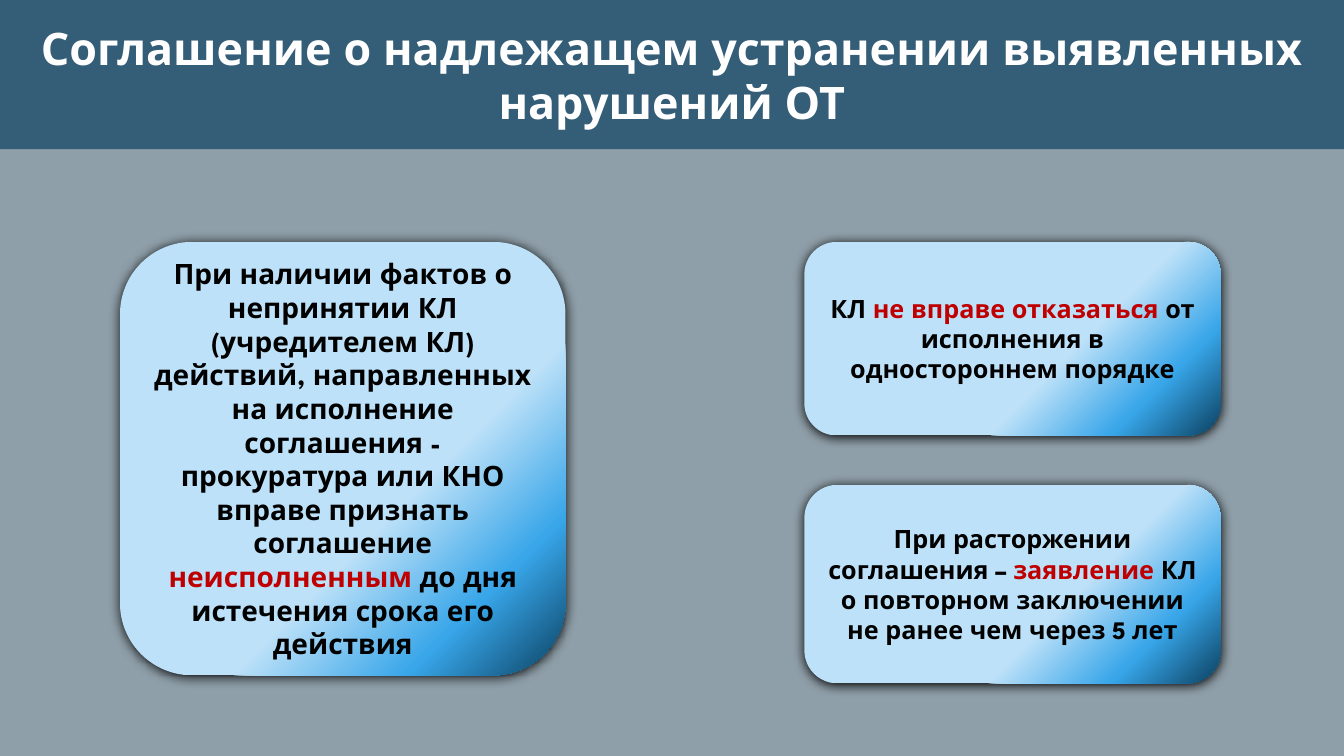
from copy import deepcopy

from lxml import etree
from pptx import Presentation
from pptx.dml.color import RGBColor
from pptx.enum.shapes import MSO_SHAPE
from pptx.enum.text import MSO_ANCHOR, MSO_AUTO_SIZE, PP_ALIGN
from pptx.oxml.ns import qn
from pptx.util import Pt

ROUNDED = MSO_SHAPE.ROUNDED_RECTANGLE
MIDDLE = MSO_ANCHOR.MIDDLE
CENTER = PP_ALIGN.CENTER
NO_AUTOFIT = MSO_AUTO_SIZE.NONE

FONT = "League Spartan"
BACKGROUND, BANNER = "8F9FA9", "345D77"
WHITE, BLACK, RED = "FFFFFF", "000000", "C00000"
GRADIENT = [(0.62, "BDE1F8"), (0.82, "38A6E9"), (1, "0B4060")]

SLIDE_SIZE = (960, 540)
BANNER_HEIGHT = 106.56
TITLE = "Соглашение о надлежащем устранении выявленных нарушений ОТ"

# (left, top, width, height), font size, [(text, colour)]
CARDS = [
    ((85.68, 172.8, 318.24, 309.6), 20, [
        ("При наличии фактов о непринятии КЛ (учредителем КЛ) действий, "
         "направленных на исполнение соглашения - прокуратура или КНО "
         "вправе признать соглашение ", BLACK),
        ("неисполненным", RED),
        (" до дня истечения срока его действия", BLACK)]),
    ((574.56, 172.8, 297.36, 138.24), 18, [
        ("КЛ ", BLACK),
        ("не вправе отказаться", RED),
        (" от исполнения в одностороннем порядке", BLACK)]),
    ((574.56, 346.32, 297.36, 141.84), 18, [
        ("При расторжении соглашения – ", BLACK),
        ("заявление", RED),
        (" КЛ о повторном заключении не ранее чем через 5 лет", BLACK)]),
]


def color(value):
    return RGBColor.from_string(value)


def format_text(shape, size):
    """Centre the shape's text both ways and return its paragraph."""
    frame = shape.text_frame
    frame.word_wrap = True
    frame.auto_size = NO_AUTOFIT
    frame.vertical_anchor = MIDDLE
    para = frame.paragraphs[0]
    para.alignment = CENTER
    para.font.name = FONT
    para.font.size = Pt(size)
    para.font.bold = True
    return para


def fill_gradient(shape):
    fill = shape.fill
    fill.gradient()
    fill.gradient_angle = 315
    stop_list = next(shape._element.spPr.iter(qn("a:gsLst")))
    stop_list.append(deepcopy(stop_list[0]))
    for stop, (position, value) in zip(fill.gradient_stops, GRADIENT):
        stop.position = position
        stop.color.rgb = color(value)


def add_shadow(shape):
    shape.shadow.inherit = False
    effects = shape._element.spPr.find(qn("a:effectLst"))
    shadow = etree.SubElement(
        effects, qn("a:outerShdw"), blurRad=str(Pt(8.5)), dist=str(Pt(1)),
        dir="5400000", algn="ctr", rotWithShape="0")
    etree.SubElement(shadow, qn("a:srgbClr"), val=BLACK)


def add_card(page, bounds, size, spans):
    card = page.shapes.add_shape(ROUNDED, *map(Pt, bounds))
    fill_gradient(card)
    card.line.fill.background()
    add_shadow(card)
    para = format_text(card, size)
    for text, value in spans:
        span = para.add_run()
        span.text = text
        span.font.color.rgb = color(value)


def add_title(page):
    title = page.shapes.title
    title.left, title.top = Pt(0), Pt(0)
    title.width, title.height = Pt(SLIDE_SIZE[0]), Pt(BANNER_HEIGHT)
    title.fill.solid()
    title.fill.fore_color.rgb = color(BANNER)
    title.text_frame.text = TITLE
    format_text(title, 32).font.color.rgb = color(WHITE)


def main():
    deck = Presentation()
    deck.slide_width, deck.slide_height = map(Pt, SLIDE_SIZE)
    page = deck.slides.add_slide(deck.slide_layouts.get_by_name("Title Only"))
    page.background.fill.solid()
    page.background.fill.fore_color.rgb = color(BACKGROUND)
    add_title(page)
    for bounds, size, spans in CARDS:
        add_card(page, bounds, size, spans)
    deck.save("out.pptx")


if __name__ == "__main__":
    main()
